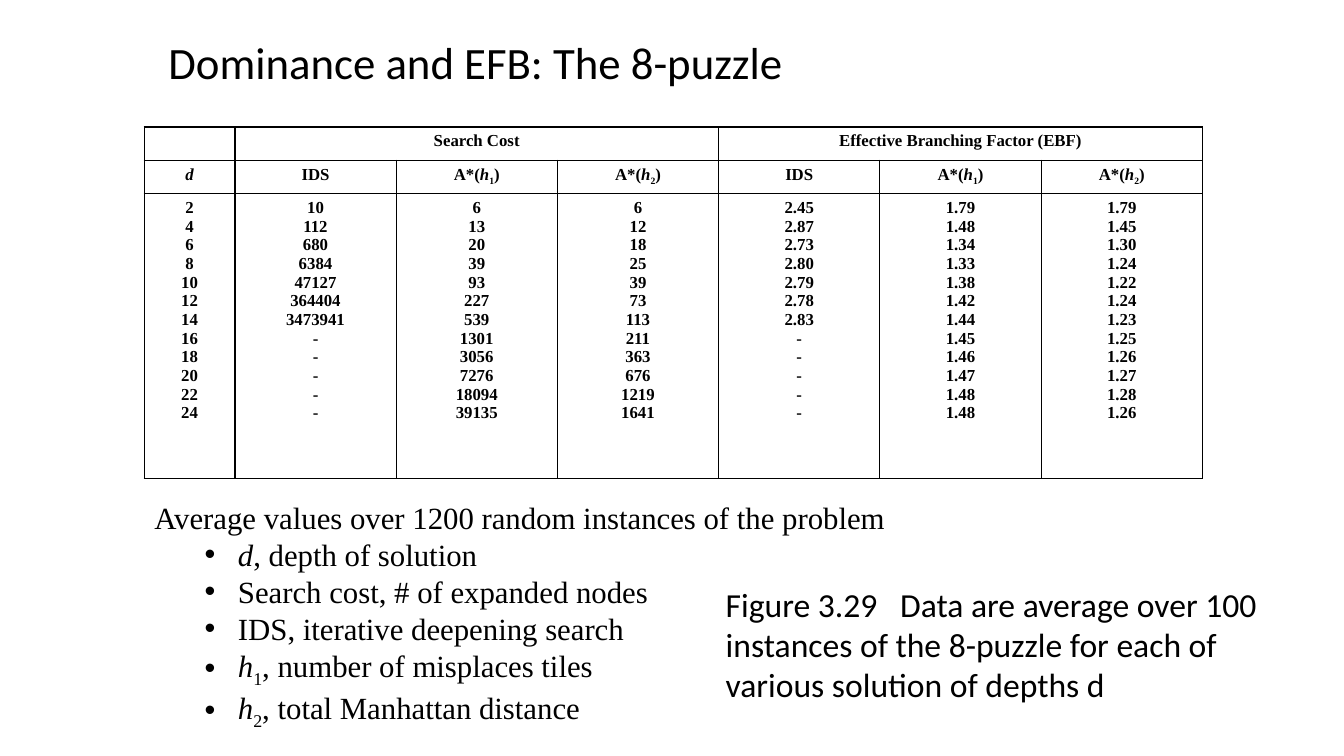
from lxml import etree
from pptx import Presentation
from pptx import util as u
from pptx.dml.color import RGBColor
from pptx.enum import text
from pptx.oxml import ns

WIDTH, HEIGHT = u.Inches(13.33), u.Inches(7.5)
SERIF, SANS = "Times New Roman", "Calibri"
BLACK, WHITE = "000000", "FFFFFF"

H1 = [("h", "italic"), ("1", "sub")]
H2 = [("h", "italic"), ("2", "sub")]
SEARCHES = [["IDS"], ["A*(", *H1, ")"], ["A*(", *H2, ")"]]
DEPTHS = "2 4 6 8 10 12 14 16 18 20 22 24".split()
RESULTS = [
    "10 112 680 6384 47127 364404 3473941 - - - - -",
    "6 13 20 39 93 227 539 1301 3056 7276 18094 39135",
    "6 12 18 25 39 73 113 211 363 676 1219 1641",
    "2.45 2.87 2.73 2.80 2.79 2.78 2.83 - - - - -",
    "1.79 1.48 1.34 1.33 1.38 1.42 1.44 1.45 1.46 1.47 1.48 1.48",
    "1.79 1.45 1.30 1.24 1.22 1.24 1.23 1.25 1.26 1.27 1.28 1.26",
]
LEGEND = [
    [("d", "italic"), ", depth of solution"],
    ["Search cost, # of expanded nodes"],
    ["IDS, iterative deepening search"],
    [*H1, ", number of misplaces tiles"],
    [*H2, ", total Manhattan distance"],
]


def across(percent):
    """Turn a percentage of the slide width into a length."""
    return u.Emu(round(WIDTH * percent / 100))


def down(percent):
    """Turn a percentage of the slide height into a length."""
    return u.Emu(round(HEIGHT * percent / 100))


def color(value):
    """Turn a hex string into a colour."""
    return RGBColor.from_string(value)


def place(shape, left, top, width, height):
    """Put a shape at percentages of the slide and anchor its text at the top."""
    shape.left, shape.top = across(left), down(top)
    shape.width, shape.height = across(width), down(height)
    shape.text_frame.vertical_anchor = text.MSO_ANCHOR.TOP
    shape.text_frame.auto_size = text.MSO_AUTO_SIZE.NONE
    shape.text_frame.word_wrap = True


def write(paragraph, pieces, size, font, bold=False, align=text.PP_ALIGN.LEFT):
    """Fill a paragraph with plain strings and (string, style) pieces."""
    paragraph.alignment = align
    paragraph.space_before = u.Pt(0)
    for piece in pieces:
        words, style = (piece, "") if isinstance(piece, str) else piece
        run = paragraph.add_run()
        run.text = words
        run.font.size, run.font.name = u.Pt(size), font
        run.font.bold, run.font.italic = bold, style == "italic"
        run.font.color.rgb = color(BLACK)
        if style == "sub":
            run.font._element.set("baseline", "-25000")


def set_bullet(paragraph, left, indent, character=None):
    """Give a paragraph its indents in inches and a bullet, or none."""
    properties = paragraph._p.get_or_add_pPr()
    properties.set("marL", str(u.Inches(left)))
    properties.set("indent", str(u.Inches(indent)))
    tag = "a:buChar" if character else "a:buNone"
    bullet = etree.SubElement(properties, ns.qn(tag))
    if character:
        bullet.set("char", character)


def set_tab(paragraph, position):
    """Add one left tab stop, in inches."""
    stops = etree.SubElement(paragraph._p.get_or_add_pPr(), ns.qn("a:tabLst"))
    etree.SubElement(stops, ns.qn("a:tab"), pos=str(u.Inches(position)), algn="l")


def style_cell(cell):
    """Give a cell thin black borders, a white fill and small empty lines."""
    properties = cell._tc.get_or_add_tcPr()
    for side in "LRTB":
        line = etree.SubElement(properties, ns.qn(f"a:ln{side}"), w=str(u.Pt(1)))
        fill = etree.SubElement(line, ns.qn("a:solidFill"))
        etree.SubElement(fill, ns.qn("a:srgbClr"), val=BLACK)
    cell.fill.solid()
    cell.fill.fore_color.rgb = color(WHITE)
    for paragraph in cell.text_frame.paragraphs:
        etree.SubElement(paragraph._p, ns.qn("a:endParaRPr"), sz="1200")


def fill_cell(cell, lines):
    """Write centred bold lines into a cell."""
    frame = cell.text_frame
    for index, pieces in enumerate(lines):
        paragraph = frame.paragraphs[0] if index == 0 else frame.add_paragraph()
        write(paragraph, pieces, 12, SERIF, True, text.PP_ALIGN.CENTER)


def add_results_table(slide):
    """Add the table of search costs and branching factors by depth."""
    columns, rows = [6.75] + [12] * 6, [4.4, 4.4, 37.73]
    frame = slide.shapes.add_table(
        len(rows), len(columns), across(10.73), down(16.8),
        across(sum(columns)), down(sum(rows)))
    table = frame.table
    table.first_row = table.horz_banding = False
    for column, width in zip(table.columns, columns):
        column.width = across(width)
    for row, height in zip(table.rows, rows):
        row.height = down(height)
    for start, heading in ((1, "Search Cost"), (4, "Effective Branching Factor (EBF)")):
        table.cell(0, start).merge(table.cell(0, start + 2))
        fill_cell(table.cell(0, start), [[heading]])
    headings = [[("d", "italic")]] + SEARCHES * 2
    values = [DEPTHS] + [result.split() for result in RESULTS]
    for index, (heading, numbers) in enumerate(zip(headings, values)):
        fill_cell(table.cell(1, index), [heading])
        fill_cell(table.cell(2, index), [[number] for number in numbers])
    for cell in table.iter_cells():
        style_cell(cell)


def add_title(slide):
    """Write the slide title."""
    title = slide.shapes.title
    place(title, 11.78, 3.87, 47.71, 8.53)
    title.text_frame.word_wrap = False
    write(title.text_frame.paragraphs[0], ["Dominance and EFB: The 8-puzzle"], 32, SANS)


def add_legend(slide):
    """Write the bulleted explanation of the table."""
    body = slide.placeholders[1]
    place(body, 10.73, 65.33, 73.52, 30.93)
    lead = body.text_frame.paragraphs[0]
    write(lead, ["Average values over 1200 random instances of the problem"], 22, SERIF)
    set_bullet(lead, 0, 0)
    for pieces in LEGEND:
        paragraph = body.text_frame.add_paragraph()
        write(paragraph, pieces, 22, SERIF)
        set_bullet(paragraph, 0.83, -0.33, "•")


def add_caption(slide):
    """Add the figure caption."""
    caption = slide.shapes.add_textbox(0, 0, 0, 0)
    place(caption, 53.26, 76.53, 43.51, 17.47)
    paragraph = caption.text_frame.paragraphs[0]
    write(paragraph, ["Figure 3.29\tData are average over 100 instances of the 8-puzzle "
                      "for each of various solution of depths d"], 24, SANS)
    set_tab(paragraph, 1.73)


def main():
    """Build the slide and save it."""
    presentation = Presentation()
    presentation.slide_width, presentation.slide_height = WIDTH, HEIGHT
    slide = presentation.slides.add_slide(presentation.slide_layouts[1])
    add_title(slide)
    add_results_table(slide)
    add_legend(slide)
    add_caption(slide)
    presentation.save("out.pptx")


if __name__ == "__main__":
    main()
